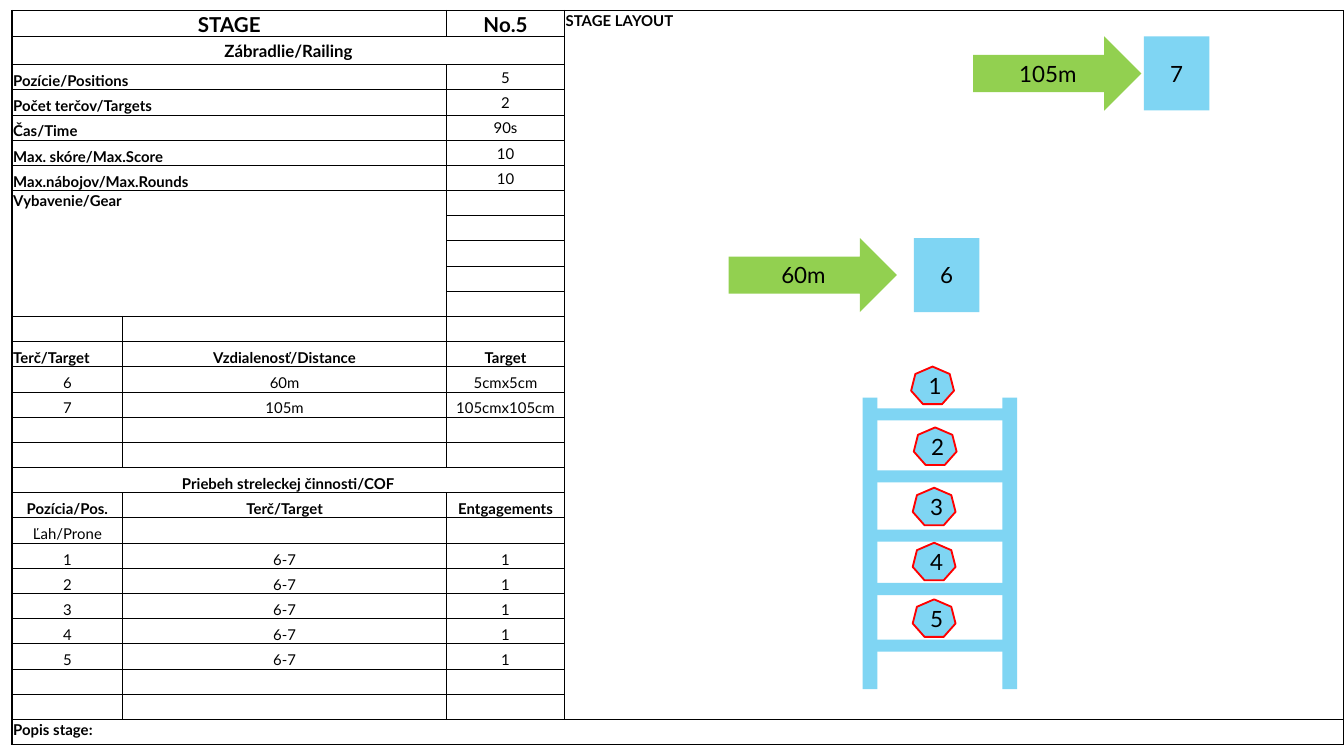
"""Build the shooting stage slide: a stage table and the railing layout."""
from typing import NamedTuple

from lxml import etree
from pptx import Presentation
from pptx.dml.color import RGBColor
from pptx.enum.shapes import MSO_SHAPE
from pptx.enum.text import MSO_ANCHOR, PP_ALIGN
from pptx.oxml.ns import qn
from pptx.util import Cm, Pt

ARROW, RECT, HEPTAGON = MSO_SHAPE.RIGHT_ARROW, MSO_SHAPE.RECTANGLE, MSO_SHAPE.HEPTAGON
TOP, MIDDLE, BOTTOM = MSO_ANCHOR.TOP, MSO_ANCHOR.MIDDLE, MSO_ANCHOR.BOTTOM
LEFT, CENTER = PP_ALIGN.LEFT, PP_ALIGN.CENTER

BLACK = RGBColor(0x00, 0x00, 0x00)
GREEN = RGBColor(0x92, 0xD0, 0x50)
BLUE = RGBColor(0x7F, 0xD5, 0xF3)
RED = RGBColor(0xFF, 0x00, 0x00)
FONT = "Lato"

ROWS = 29
COLUMN_WIDTHS = (2.09, 6.12, 2.23, 14.73)
TABLE_HEIGHT = 13.87
SUBTITLE_HEIGHT = 0.53
ROW_HEIGHT = (TABLE_HEIGHT - SUBTITLE_HEIGHT) / (ROWS - 1)


class Entry(NamedTuple):
    row: int
    col: int
    text: str
    bold: bool = False
    align: PP_ALIGN = CENTER
    anchor: MSO_ANCHOR = BOTTOM
    size: float = 8
    rows: int = 1
    cols: int = 1


class Piece(NamedTuple):
    kind: MSO_SHAPE
    left: float
    top: float
    width: float
    height: float
    fill: RGBColor
    text: str = ""
    line: RGBColor | None = None
    rotation: float = 0


FACTS = (
    ("Pozície/Positions", "5"),
    ("Počet terčov/Targets", "2"),
    ("Čas/Time", "90s"),
    ("Max. skóre/Max.Score", "10"),
    ("Max.nábojov/Max.Rounds", "10"),
)
TARGETS = (("6", "60m", "5cmx5cm"), ("7", "105m", "105cmx105cm"))
COURSE = tuple((str(n), "6-7", "1") for n in range(1, 6))


def line_of(row: int, texts: tuple[str, ...], bold: bool = False) -> list[Entry]:
    """Return one centred entry per column of a row."""
    return [Entry(row, col, text, bold) for col, text in enumerate(texts)]


def stage_entries() -> list[Entry]:
    """Return every filled cell of the stage table."""
    entries = [
        Entry(0, 0, "STAGE", True, size=11, cols=2),
        Entry(0, 2, "No.5", True, anchor=MIDDLE, size=11),
        Entry(0, 3, "STAGE LAYOUT", True, LEFT, TOP, rows=ROWS - 1),
        Entry(1, 0, "Zábradlie/Railing", True, anchor=MIDDLE, size=9, cols=3),
        Entry(7, 0, "Vybavenie/Gear", True, LEFT, TOP, rows=5, cols=2),
        Entry(13, 0, "Terč/Target", True, LEFT),
        Entry(13, 1, "Vzdialenosť/Distance", True),
        Entry(13, 2, "Target", True),
        Entry(18, 0, "Priebeh streleckej činnosti/COF", True, cols=3),
        Entry(20, 0, "Ľah/Prone"),
        Entry(28, 0, "Popis stage:", True, LEFT, TOP, cols=4),
    ]
    for row, (label, value) in enumerate(FACTS, 2):
        entries.append(Entry(row, 0, label, True, LEFT, cols=2))
        entries.append(Entry(row, 2, value, anchor=MIDDLE))
    entries += line_of(19, ("Pozícia/Pos.", "Terč/Target", "Entgagements"), True)
    for first, block in ((14, TARGETS), (21, COURSE)):
        for row, texts in enumerate(block, first):
            entries += line_of(row, texts)
    return entries


def layout_pieces() -> list[Piece]:
    """Return arrows, targets, railing and numbered positions."""
    pieces = []
    for label, number, arrow_x, target_x, y in (
        ("105m", "7", 18.39, 21.62, 0.69),
        ("60m", "6", 13.77, 17.27, 4.5),
    ):
        pieces.append(Piece(ARROW, arrow_x, y, 3.18, 1.4, GREEN, label))
        pieces.append(Piece(RECT, target_x, y, 1.24, 1.4, BLUE, number))
    for x in (13.69, 16.33):
        pieces.append(Piece(RECT, x, 10.13, 5.51, 0.28, BLUE, rotation=270))
    for x, y in ((16.51, 7.72), (16.46, 8.89), (16.51, 10.01), (16.56, 11.02), (16.46, 12.09)):
        pieces.append(Piece(RECT, x, y, 2.51, 0.23, BLUE))
    positions = ((17.22, 6.93), (17.27, 8.08), (17.25, 9.22), (17.25, 10.26), (17.25, 11.33))
    for number, (x, y) in enumerate(positions, 1):
        pieces.append(Piece(HEPTAGON, x, y, 0.81, 0.71, BLUE, str(number), RED))
    return pieces


def style_run(r, size: float, bold: bool = False) -> None:
    """Set the font of a run."""
    r.font.name = FONT
    r.font.size = Pt(size)
    r.font.bold = bold
    r.font.color.rgb = BLACK


def set_border(cell, side: str, width: float) -> None:
    """Draw one black edge of a cell."""
    ln = etree.SubElement(cell._tc.get_or_add_tcPr(), qn(f"a:ln{side}"), w=str(Pt(width)))
    fill = etree.SubElement(ln, qn("a:solidFill"))
    etree.SubElement(fill, qn("a:srgbClr"), val=str(BLACK))


def frame_cell(cell, row: int, col: int) -> None:
    """Give a cell thin edges, thicker along the outside of the table."""
    outer = {
        "L": col == 0,
        "R": col + cell.span_width == len(COLUMN_WIDTHS),
        "T": row == 0,
        "B": row + cell.span_height == ROWS,
    }
    for side, is_outer in outer.items():
        set_border(cell, side, 1 if is_outer else 0.5)


def draw_table(s, entries: list[Entry]) -> None:
    """Draw the stage table."""
    frame = s.shapes.add_table(ROWS, len(COLUMN_WIDTHS), Cm(0.23), Cm(0.2),
                               Cm(sum(COLUMN_WIDTHS)), Cm(TABLE_HEIGHT))
    table = frame.table
    table.first_row = table.horz_banding = False
    for column, width in zip(table.columns, COLUMN_WIDTHS):
        column.width = Cm(width)
    for index, row in enumerate(table.rows):
        row.height = Cm(SUBTITLE_HEIGHT if index == 1 else ROW_HEIGHT)
    for e in entries:
        cell = table.cell(e.row, e.col)
        if e.rows * e.cols > 1:
            cell.merge(table.cell(e.row + e.rows - 1, e.col + e.cols - 1))
        cell.text_frame.text = e.text
        cell.vertical_anchor = e.anchor
        p = cell.text_frame.paragraphs[0]
        p.alignment = e.align
        style_run(p.runs[0], e.size, e.bold)
    for row in range(ROWS):
        for col in range(len(COLUMN_WIDTHS)):
            cell = table.cell(row, col)
            cell.margin_left = cell.margin_right = cell.margin_top = Cm(0.02)
            cell.margin_bottom = 0
            if not cell.is_spanned:
                frame_cell(cell, row, col)
            cell.fill.background()
            if not cell.text_frame.text:
                etree.SubElement(cell.text_frame.paragraphs[0]._p, qn("a:endParaRPr"), sz="800")


def draw_piece(s, piece: Piece) -> None:
    """Draw one shape of the stage layout."""
    sp = s.shapes.add_shape(piece.kind, Cm(piece.left), Cm(piece.top),
                            Cm(piece.width), Cm(piece.height))
    sp.shadow.inherit = False
    sp.rotation = piece.rotation
    sp.fill.solid()
    sp.fill.fore_color.rgb = piece.fill
    if piece.line is None:
        sp.line.fill.background()
    else:
        sp.line.color.rgb = piece.line
        sp.line.width = Pt(1)
    if piece.text:
        tf = sp.text_frame
        tf.margin_left = tf.margin_right = tf.margin_top = tf.margin_bottom = Cm(0.25)
        tf.vertical_anchor = MIDDLE
        tf.text = piece.text
        p = tf.paragraphs[0]
        p.alignment = CENTER
        style_run(p.runs[0], 12)


def main() -> None:
    """Build and save the slide."""
    prs = Presentation()
    prs.slide_width, prs.slide_height = Cm(25.4), Cm(14.29)
    s = prs.slides.add_slide(prs.slide_layouts[6])
    draw_table(s, stage_entries())
    for piece in layout_pieces():
        draw_piece(s, piece)
    prs.save("out.pptx")


if __name__ == "__main__":
    main()
